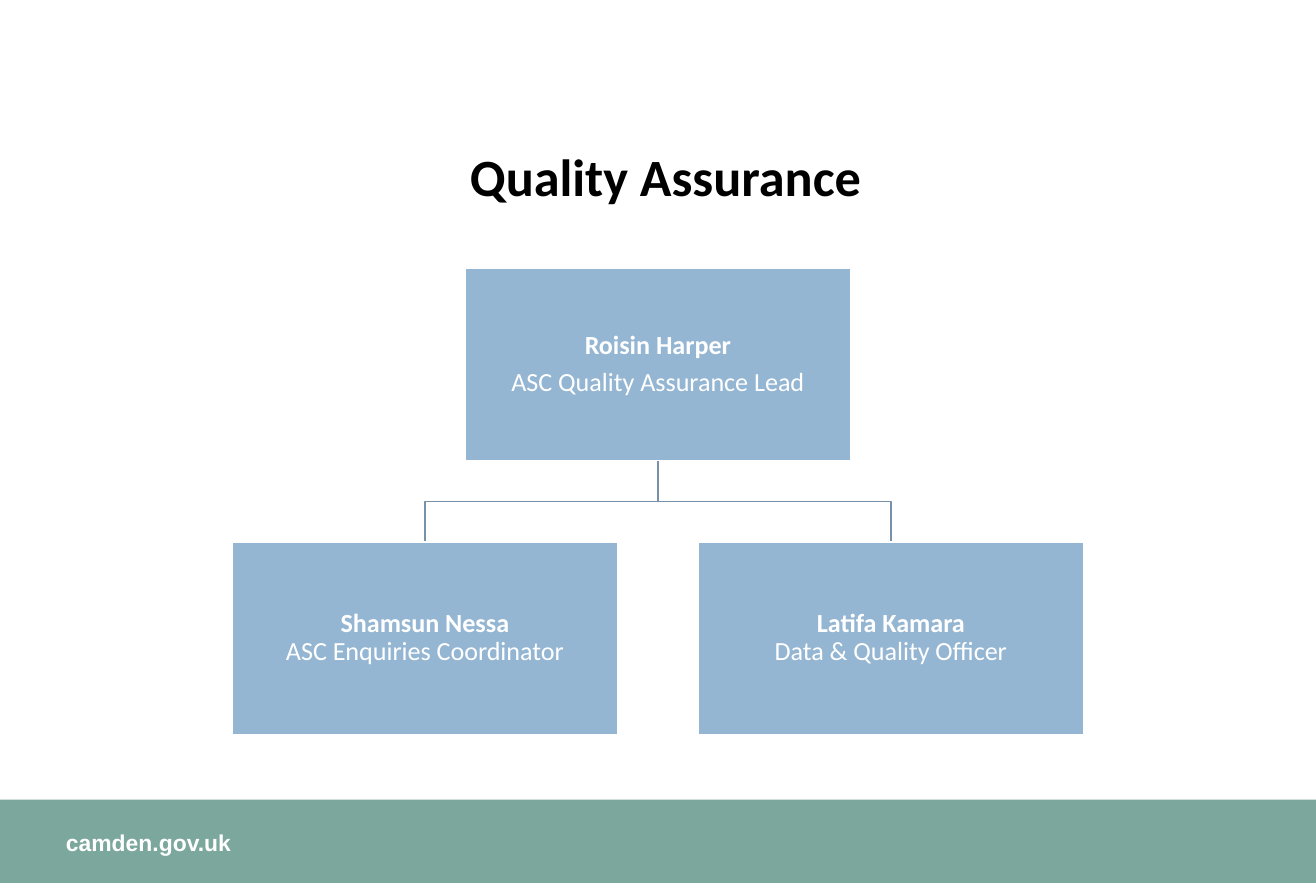
from dataclasses import dataclass

from pptx import Presentation
from pptx.dml.color import RGBColor
from pptx.enum.shapes import MSO_SHAPE
from pptx.enum.text import MSO_ANCHOR, MSO_AUTO_SIZE, PP_ALIGN
from pptx.util import Pt


@dataclass(frozen=True)
class Theme:
    white: RGBColor = RGBColor(0xFF, 0xFF, 0xFF)
    black: RGBColor = RGBColor(0x00, 0x00, 0x00)
    band: RGBColor = RGBColor(0x7B, 0xA7, 0x9D)
    box: RGBColor = RGBColor(0x94, 0xB6, 0xD2)
    connector: RGBColor = RGBColor(0x77, 0x92, 0xA8)
    heading_font: str = "Calibri"
    footer_font: str = "Arial"
    title_size: Pt = Pt(32)
    box_size: Pt = Pt(16)
    footer_size: Pt = Pt(14)


theme = Theme()


def add_run(paragraph, text, font_name, size, color, bold=True):
    run = paragraph.add_run()
    run.text = text
    run.font.name = font_name
    run.font.size = size
    run.font.bold = bold
    run.font.color.rgb = color


def add_rectangle(left, top, width, height, fill):
    shape = slide.shapes.add_shape(
        MSO_SHAPE.RECTANGLE, Pt(left), Pt(top), Pt(width), Pt(height))
    shape.shadow.inherit = False
    shape.fill.solid()
    shape.fill.fore_color.rgb = fill
    shape.line.fill.background()
    return shape


SLIDE_WIDTH, SLIDE_HEIGHT = 805, 540
BOX_WIDTH, BOX_HEIGHT = 235.5, 117.75
CENTER = SLIDE_WIDTH / 2
BRANCH = 142.5
LEAD_TOP, TEAM_TOP = 164, 331.5
BAND_TOP = 489

presentation = Presentation()
presentation.slide_width = Pt(SLIDE_WIDTH)
presentation.slide_height = Pt(SLIDE_HEIGHT)
slide = presentation.slides.add_slide(presentation.slide_layouts[5])

# Footer band
add_rectangle(0, BAND_TOP, SLIDE_WIDTH, SLIDE_HEIGHT - BAND_TOP, theme.band)
footer = slide.shapes.add_textbox(Pt(40.3), Pt(507), Pt(332), Pt(17))
frame = footer.text_frame
frame.word_wrap = True
frame.margin_left = frame.margin_top = frame.margin_bottom = 0
add_run(frame.paragraphs[0], "camden.gov.uk",
        theme.footer_font, theme.footer_size, theme.white)

# Title
title = slide.shapes.title
title.left, title.top, title.width, title.height = Pt(45), Pt(65), Pt(724.5), Pt(90)
frame = title.text_frame
frame.auto_size = MSO_AUTO_SIZE.NONE
frame.vertical_anchor = MSO_ANCHOR.MIDDLE
paragraph = frame.paragraphs[0]
paragraph.alignment = PP_ALIGN.CENTER
paragraph.line_spacing = 0.9
add_run(paragraph, "Quality Assurance",
        theme.heading_font, theme.title_size, theme.black)

# Lines from the lead to each team member
lead_bottom = LEAD_TOP + BOX_HEIGHT
middle = (lead_bottom + TEAM_TOP) / 2
for member_center in (CENTER + BRANCH, CENTER - BRANCH):
    builder = slide.shapes.build_freeform(Pt(CENTER), Pt(lead_bottom))
    builder.add_line_segments(
        [(Pt(CENTER), Pt(middle)),
         (Pt(member_center), Pt(middle)),
         (Pt(member_center), Pt(TEAM_TOP))],
        close=False)
    branch = builder.convert_to_shape()
    branch.shadow.inherit = False
    branch.fill.background()
    branch.line.color.rgb = theme.connector
    branch.line.width = Pt(1)

# Boxes: centre, top, name, role, whether the role is its own paragraph
people = [
    (CENTER, LEAD_TOP, "Roisin Harper", "ASC Quality Assurance Lead", True),
    (CENTER - BRANCH, TEAM_TOP, "Shamsun Nessa", "ASC Enquiries Coordinator", False),
    (CENTER + BRANCH, TEAM_TOP, "Latifa Kamara", "Data & Quality Officer", False),
]
for center, top, name, role, separate in people:
    box = add_rectangle(center - BOX_WIDTH / 2, top, BOX_WIDTH, BOX_HEIGHT, theme.box)
    box.line.color.rgb = theme.white
    box.line.width = Pt(1)
    frame = box.text_frame
    frame.word_wrap = True
    frame.vertical_anchor = MSO_ANCHOR.MIDDLE
    frame.margin_left = frame.margin_right = Pt(0.8)
    frame.margin_top = frame.margin_bottom = Pt(0.8)
    paragraph = frame.paragraphs[0]
    add_run(paragraph, name, theme.heading_font, theme.box_size, theme.white)
    if separate:
        paragraph = frame.add_paragraph()
    else:
        paragraph.add_line_break()
    add_run(paragraph, role, theme.heading_font, theme.box_size, theme.white, bold=False)
    for paragraph in frame.paragraphs:
        paragraph.alignment = PP_ALIGN.CENTER
        paragraph.line_spacing = 0.9
        paragraph.space_after = Pt(5.6)

presentation.save("out.pptx")
